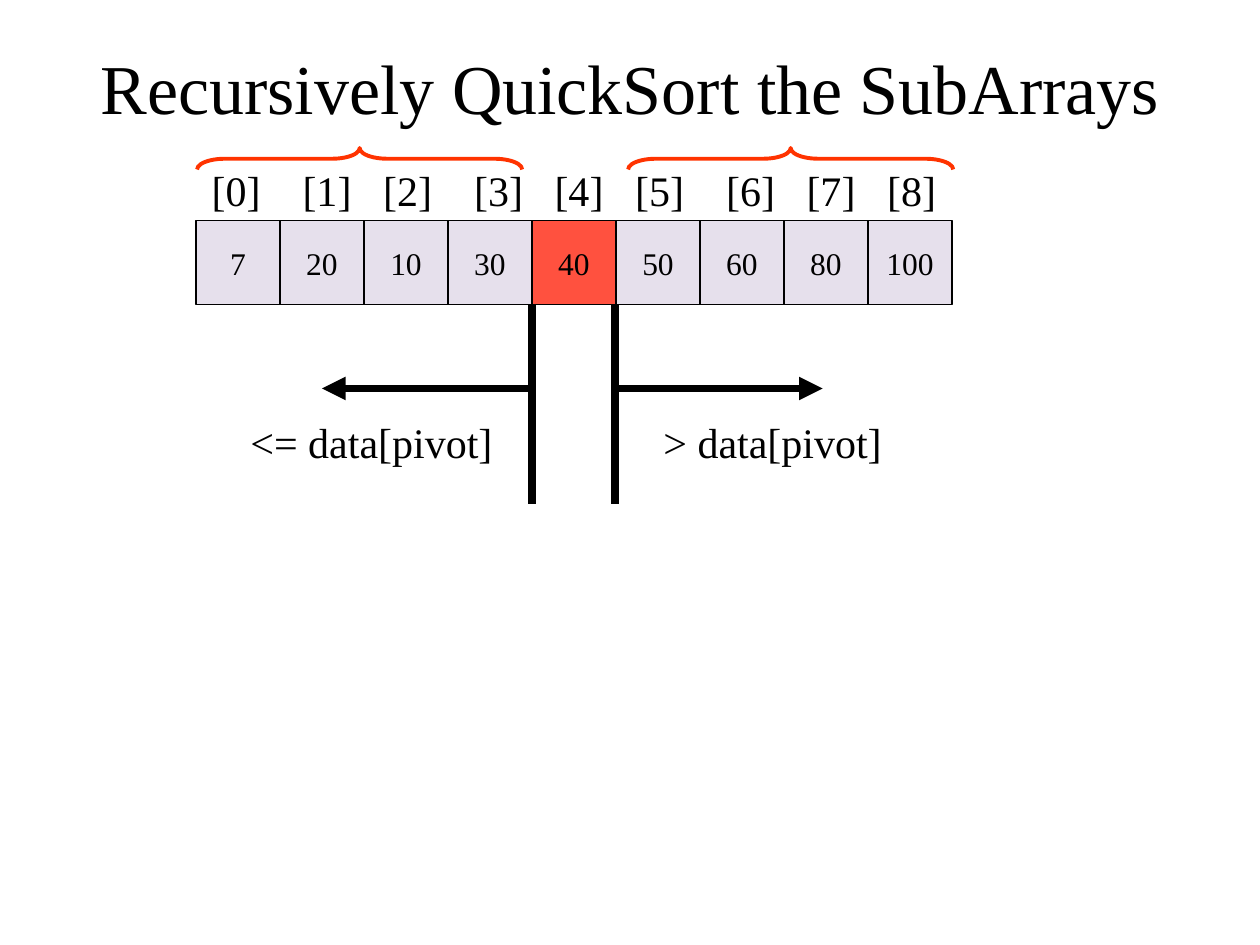
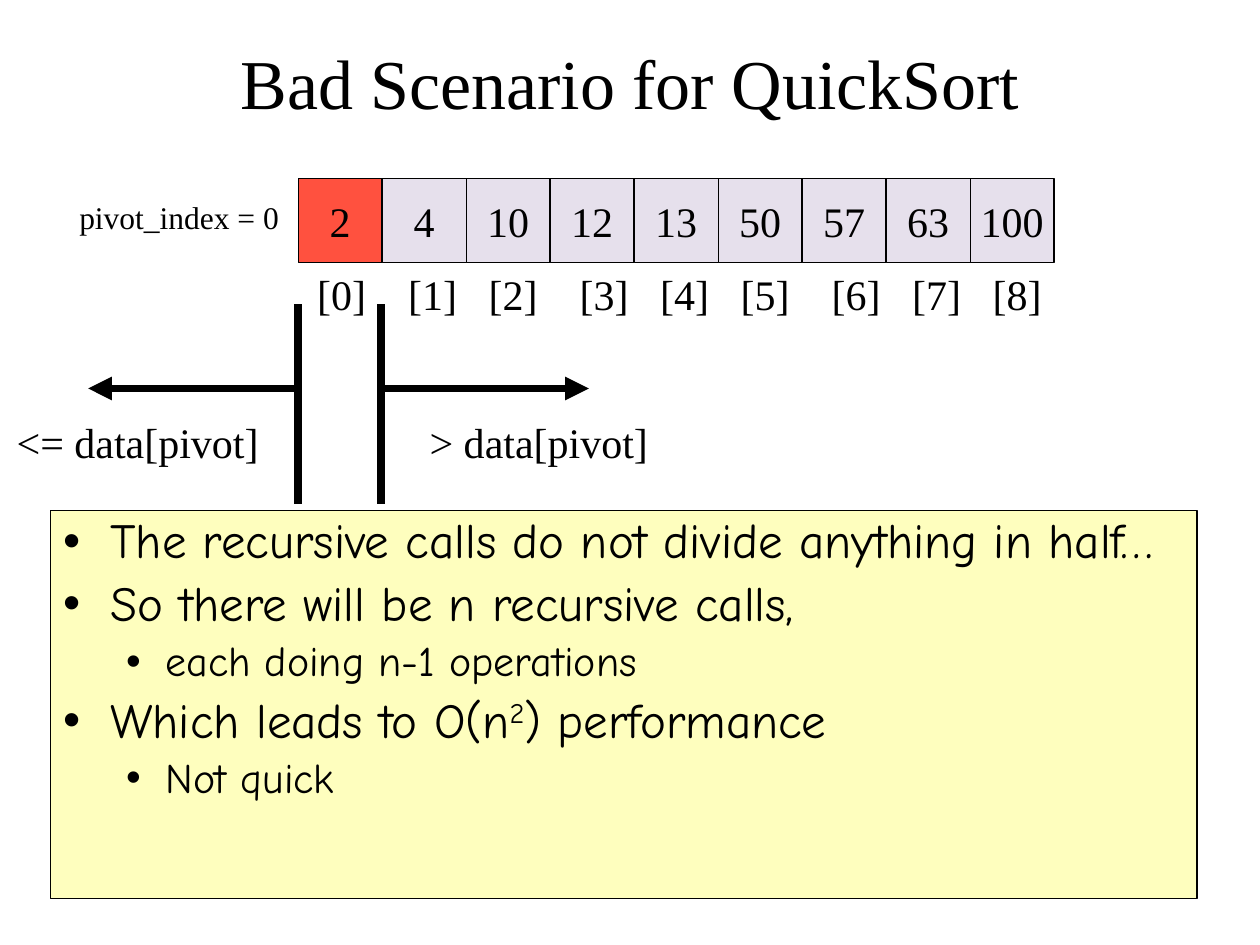
import pptx
import pptx.util
import pptx.dml.color
import pptx.enum.shapes
import pptx.enum.text
import pptx.oxml.ns
from dataclasses import dataclass
from itertools import accumulate
from lxml import etree

Pt = pptx.util.Pt
Shape = pptx.enum.shapes.MSO_SHAPE
Align = pptx.enum.text.PP_ALIGN
Anchor = pptx.enum.text.MSO_ANCHOR
qn = pptx.oxml.ns.qn

# Shared style
COLORS = {
    "ink": "000000",
    "cell": "E6E0EC",
    "pivot": "FF513F",
    "brace": "FF3300",
    "panel": "FEFEBE",
}
SERIF = "Times New Roman"
HAND = "Comic Neue"

# Shared geometry, in points
CELL = 48
BAR_TOP, BAR_BOTTOM = 174, 288
ARROW_Y, ARROW_LENGTH = 222, 120
BAR_GAP, ARROW_GAP = 47.2, 46.1
INDEX_STEPS = (52, 46, 52, 46, 46, 52, 46, 46)


@dataclass(frozen=True)
class SortArray:
    values: tuple[int, ...]
    pivot: int
    left: float
    top: float
    text_size: int
    index_left: float
    index_top: float

    @property
    def pivot_left(self) -> float:
        return self.left + self.pivot * CELL


@dataclass(frozen=True)
class Bullet:
    level: int
    pieces: tuple[str, ...]  # every second piece is superscript


@dataclass(frozen=True)
class BulletStyle:
    size: int
    margin: float
    hanging: float


BULLET_STYLES = (BulletStyle(28, 27, 27), BulletStyle(24, 58.5, 22.5))


def rgb(name: str) -> pptx.dml.color.RGBColor:
    return pptx.dml.color.RGBColor.from_string(COLORS[name])


def style_run(run, size: float, font: str = SERIF) -> None:
    run.font.size = Pt(size)
    run.font.name = font
    run.font.color.rgb = rgb("ink")


def place(shape, left: float, top: float, width: float, height: float) -> None:
    shape.left, shape.top = Pt(left), Pt(top)
    shape.width, shape.height = Pt(width), Pt(height)


def outline(shape, color: str, width: float) -> None:
    shape.line.color.rgb = rgb(color)
    shape.line.width = Pt(width)


def set_title(slide, text: str, height: float) -> None:
    title = slide.shapes.title
    place(title, 36, 21.6, 648, height)
    frame = title.text_frame
    frame.text = text
    frame.auto_size = pptx.enum.text.MSO_AUTO_SIZE.NONE
    frame.vertical_anchor = Anchor.MIDDLE
    frame.paragraphs[0].alignment = Align.CENTER
    style_run(frame.paragraphs[0].runs[0], 40)


def add_label(slide, text: str, left: float, top: float,
              width: float, height: float = 36, size: float = 24):
    label = slide.shapes.add_textbox(Pt(left), Pt(top), Pt(width), Pt(height))
    label.text_frame.word_wrap = False
    label.text_frame.text = text
    paragraph = label.text_frame.paragraphs[0]
    style_run(paragraph.runs[0], size)
    return paragraph


def add_rule(slide, x1: float, y1: float, x2: float, y2: float,
             arrow: bool = False) -> None:
    rule = slide.shapes.add_connector(
        pptx.enum.shapes.MSO_CONNECTOR.STRAIGHT, Pt(x1), Pt(y1), Pt(x2), Pt(y2))
    outline(rule, "ink", 4.5)
    properties = rule._element.spPr
    if arrow:
        etree.SubElement(properties.find(qn("a:ln")), qn("a:tailEnd"), type="triangle")
    etree.SubElement(properties, qn("a:effectLst"))


def add_indices(slide, array: SortArray) -> None:
    text = "\t".join(f"[{i}]" for i in range(len(array.values)))
    paragraph = add_label(slide, text, array.index_left, array.index_top, 428.4)
    tabs = etree.SubElement(paragraph._p.get_or_add_pPr(), qn("a:tabLst"))
    for stop in accumulate(INDEX_STEPS):
        etree.SubElement(tabs, qn("a:tab"), pos=str(Pt(stop)), algn="l")


def add_array(slide, array: SortArray) -> None:
    for i, value in enumerate(array.values):
        cell = slide.shapes.add_shape(
            Shape.RECTANGLE, Pt(array.left + i * CELL), Pt(array.top), Pt(CELL), Pt(CELL))
        cell.shadow.inherit = False
        cell.fill.solid()
        cell.fill.fore_color.rgb = rgb("pivot" if i == array.pivot else "cell")
        outline(cell, "ink", 0.75)
        frame = cell.text_frame
        frame.word_wrap = False
        frame.vertical_anchor = Anchor.MIDDLE
        frame.text = str(value)
        frame.paragraphs[0].alignment = Align.CENTER
        style_run(frame.paragraphs[0].runs[0], array.text_size)
    add_indices(slide, array)


def add_partition(slide, pivot_left: float) -> None:
    """Bars around the pivot, with arrows to the two subarrays."""
    for x in (pivot_left, pivot_left + BAR_GAP):
        add_rule(slide, x, BAR_TOP, x, BAR_BOTTOM)
    for start, direction in ((pivot_left, -1), (pivot_left + ARROW_GAP, 1)):
        add_rule(slide, start, ARROW_Y, start + direction * ARROW_LENGTH, ARROW_Y, arrow=True)
    add_label(slide, "<= data[pivot]", pivot_left - 168, 234.7, 154)
    add_label(slide, "> data[pivot]", pivot_left + 68, 234.7, 140)


def add_brace(slide, center: float) -> None:
    depth, span, middle = 12.24, 185.76, 90.72
    brace = slide.shapes.add_shape(
        Shape.LEFT_BRACE, Pt(center - depth / 2), Pt(middle - span / 2), Pt(depth), Pt(span))
    brace.rotation = 90
    brace.adjustments[0] = 1.29
    brace.adjustments[1] = 0.5
    brace.shadow.inherit = False
    brace.fill.background()
    outline(brace, "brace", 2.25)


def fill_panel(panel, bullets: tuple[Bullet, ...]) -> None:
    place(panel, 28.8, 291.6, 655.2, 222)
    panel.fill.solid()
    panel.fill.fore_color.rgb = rgb("panel")
    outline(panel, "ink", 0.75)
    frame = panel.text_frame
    frame.auto_size = pptx.enum.text.MSO_AUTO_SIZE.NONE
    for i, bullet in enumerate(bullets):
        paragraph = frame.paragraphs[0] if i == 0 else frame.add_paragraph()
        style = BULLET_STYLES[bullet.level]
        paragraph.level = bullet.level
        paragraph.line_spacing = 0.9
        properties = paragraph._p.get_or_add_pPr()
        properties.set("marL", str(Pt(style.margin)))
        properties.set("indent", str(-Pt(style.hanging)))
        etree.SubElement(properties, qn("a:buFont"), typeface="Arial")
        etree.SubElement(properties, qn("a:buChar"), char="•")
        for n, piece in enumerate(bullet.pieces):
            run = paragraph.add_run()
            run.text = piece
            style_run(run, style.size, HAND)
            if n % 2:
                run._r.get_or_add_rPr().set("baseline", "30000")


def build_recursion(deck) -> None:
    slide = deck.slides.add_slide(deck.slide_layouts[5])
    set_title(slide, "Recursively QuickSort the SubArrays", 56.2)
    array = SortArray((7, 20, 10, 30, 40, 50, 60, 80, 100), pivot=4, left=112, top=126,
                      text_size=18, index_left=113.8, index_top=90.7)
    add_array(slide, array)
    add_partition(slide, array.pivot_left)
    for center in (205.5, 451.8):
        add_brace(slide, center)


def build_bad_scenario(deck) -> None:
    slide = deck.slides.add_slide(deck.slide_layouts[1])
    set_title(slide, "Bad Scenario for QuickSort", 50.4)
    array = SortArray((2, 4, 10, 12, 13, 50, 57, 63, 100), pivot=0, left=170.4, top=102,
                      text_size=24, index_left=174.2, index_top=149.8)
    add_array(slide, array)
    add_label(slide, "pivot_index = 0", 38.2, 109.4, 128.9, 28.8, size=18)
    add_partition(slide, array.pivot_left)
    fill_panel(slide.placeholders[1], (
        Bullet(0, ("The recursive calls do not divide anything in half…",)),
        Bullet(0, ("So there will be n recursive calls,",)),
        Bullet(1, ("each doing n-1 operations",)),
        Bullet(0, ("Which leads to O(n", "2", ") performance")),
        Bullet(1, ("Not quick",)),
    ))


def main() -> None:
    deck = pptx.Presentation()
    deck.slide_width, deck.slide_height = Pt(720), Pt(540)
    build_recursion(deck)
    build_bad_scenario(deck)
    deck.save("out.pptx")


if __name__ == "__main__":
    main()
